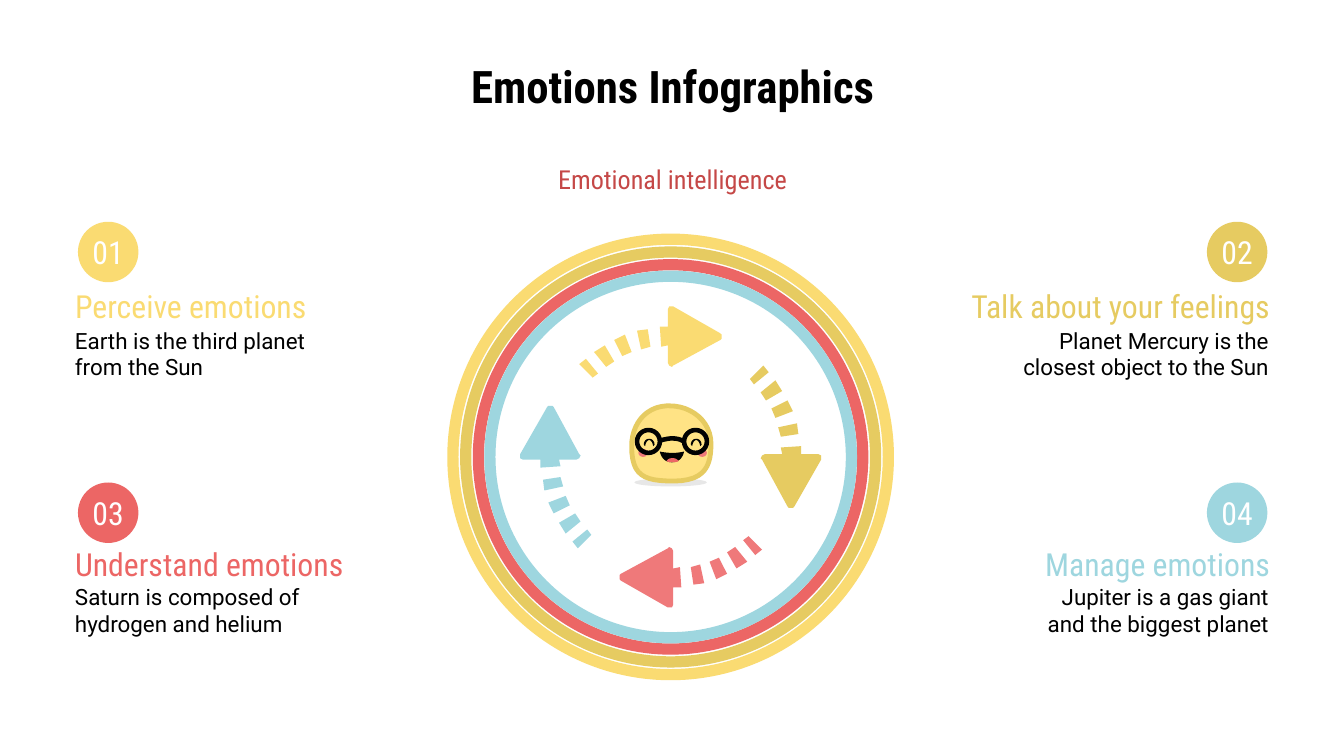
from pptx import Presentation
from pptx.dml.color import RGBColor
from pptx.enum.shapes import MSO_SHAPE
from pptx.enum.text import MSO_ANCHOR, MSO_AUTO_SIZE, PP_ALIGN
from pptx.util import Inches, Pt

OVAL = MSO_SHAPE.OVAL
TOP, MIDDLE = MSO_ANCHOR.TOP, MSO_ANCHOR.MIDDLE
LEFT, CENTER, RIGHT = PP_ALIGN.LEFT, PP_ALIGN.CENTER, PP_ALIGN.RIGHT
NO_AUTOFIT = MSO_AUTO_SIZE.NONE

YELLOW = RGBColor(0xFA, 0xDB, 0x72)
GOLD = RGBColor(0xE6, 0xCB, 0x61)
RED = RGBColor(0xEC, 0x66, 0x65)
PINK = RGBColor(0xEF, 0x79, 0x7A)
BLUE = RGBColor(0x9E, 0xD6, 0xDF)
DARK_RED = RGBColor(0xC5, 0x48, 0x47)
SKIN = RGBColor(0xFF, 0xE3, 0x85)
GREY = RGBColor(0xE7, 0xE7, 0xE7)
INK = RGBColor(0x01, 0x02, 0x02)
BLACK = RGBColor(0, 0, 0)
WHITE = RGBColor(0xFF, 0xFF, 0xFF)
CONDENSED, REGULAR = "Roboto Condensed", "Roboto"

CENTER_X, CENTER_Y = 4.99, 3.4
CURVE_STEPS = 12

# Widescreen page, 16:9
deck = Presentation()
deck.slide_width = Inches(10)
deck.slide_height = Inches(10) * 9 // 16
slide = deck.slides.add_slide(deck.slide_layouts[5])
shapes = slide.shapes


def write(text, box=None, shape=None, size=12, font=CONDENSED, color=BLACK,
          bold=False, align=LEFT, anchor=MIDDLE, side_inset=0.1):
    """Put formatted text in a given shape, or in a new text box."""
    if shape is None:
        shape = shapes.add_textbox(*map(Inches, box))
    frame = shape.text_frame
    frame.word_wrap, frame.auto_size = True, NO_AUTOFIT
    frame.vertical_anchor = anchor
    frame.margin_left = frame.margin_right = Inches(side_inset)
    frame.margin_top = frame.margin_bottom = Inches(0.1)
    para = frame.paragraphs[0]
    para.text, para.alignment = text, align
    for span in para.runs:
        span.font.name, span.font.size = font, Pt(size)
        span.font.bold, span.font.color.rgb = bold, color


def draw(oval=None, outline=None, fill=None, line=None, width=1, closed=True):
    """Draw an oval box, or an outline of points (2 numbers) and curves (6)."""
    if oval:
        shape = shapes.add_shape(OVAL, *map(Inches, oval))
    else:
        points = [outline[0]]
        for step in outline[1:]:
            if len(step) == 2:
                points.append(step)
                continue
            knots = [points[-1], step[:2], step[2:4], step[4:]]
            for index in range(1, CURVE_STEPS + 1):
                t = index / CURVE_STEPS
                weights = ((1 - t) ** 3, 3 * t * (1 - t) ** 2, 3 * t * t * (1 - t), t ** 3)
                points.append([sum(w * knot[axis] for w, knot in zip(weights, knots))
                               for axis in (0, 1)])
        points = [(Inches(x), Inches(y)) for x, y in points]
        builder = shapes.build_freeform(*points[0], scale=1.0)
        builder.add_line_segments(points[1:], close=closed)
        shape = builder.convert_to_shape()
    shape.shadow.inherit = False
    if fill is None:
        shape.fill.background()
    else:
        shape.fill.solid()
        shape.fill.fore_color.rgb = fill
    if line is None:
        shape.line.fill.background()
    else:
        shape.line.color.rgb, shape.line.width = line, Pt(width)
    return shape


# Title and subtitle
title = shapes.title
title.left, title.top, title.width, title.height = map(Inches, (0.2, 0.34, 9.61, 0.63))
write("Emotions Infographics", shape=title, size=24, bold=True, align=CENTER, anchor=TOP)

# Concentric rings
for diameter, color in ((3.24, YELLOW), (3.05, GOLD), (2.86, RED), (2.69, BLUE)):
    draw(oval=(CENTER_X - diameter / 2, CENTER_Y - diameter / 2, diameter, diameter),
         line=color, width=6)

write("Emotional intelligence", (2.4, 1.1, 5.21, 0.47), size=14, color=DARK_RED, align=CENTER)

# Dashed arrow, turned by quarters around the centre
arrow_parts = [
    [(4.5, 2.57), (4.57, 2.69), (4.51, 2.73), (4.42, 2.62)],
    [(4.36, 2.67), (4.45, 2.78), (4.41, 2.81), (4.31, 2.71)],
    [(4.65, 2.49), (4.7, 2.62), (4.63, 2.65), (4.57, 2.53)],
    [(4.82, 2.45), (4.84, 2.58), (4.77, 2.6), (4.74, 2.46)],
    [(5, 2.28), (5.01, 2.28), (5.36, 2.48), (5.37, 2.49), (5.37, 2.52), (5.36, 2.53),
     (5.01, 2.72), (5, 2.73), (4.98, 2.72), (4.97, 2.7), (4.97, 2.57), (4.92, 2.58),
     (4.91, 2.43), (4.97, 2.43), (4.97, 2.3), (4.98, 2.28)],
]
for quarter_turns, color in ((0, YELLOW), (3, BLUE), (1, GOLD), (2, PINK)):
    for part in arrow_parts:
        offsets = [(x - CENTER_X, y - CENTER_Y) for x, y in part]
        for _ in range(quarter_turns):
            offsets = [(-dy, dx) for dx, dy in offsets]
        draw(outline=[(CENTER_X + dx, CENTER_Y + dy) for dx, dy in offsets], fill=color)

# Smiling face: shadow, head, mouth, tongue
draw(oval=(4.72, 3.56, 0.54, 0.06), fill=GREY)
draw(outline=[(4.98, 3.02), (4.97, 3.02, 4.97, 3.02, 4.96, 3.02),
              (4.79, 3.03, 4.7, 3.17, 4.7, 3.32), (4.7, 3.54, 4.79, 3.58, 5.01, 3.58),
              (5.26, 3.58, 5.29, 3.45, 5.29, 3.3), (5.29, 3.14, 5.15, 3.02, 4.98, 3.02)],
     fill=SKIN, line=GOLD, width=2.57)
draw(outline=[(5.09, 3.36), (5.05, 3.37, 5.02, 3.37, 5, 3.37),
              (4.95, 3.37, 4.91, 3.36, 4.91, 3.36), (4.91, 3.36, 4.92, 3.44, 5, 3.44),
              (5.08, 3.44, 5.09, 3.36, 5.09, 3.36)], fill=INK)
draw(outline=[(5, 3.41), (4.97, 3.41, 4.96, 3.43, 4.96, 3.43),
              (4.97, 3.44, 4.98, 3.44, 5, 3.44), (5.02, 3.44, 5.04, 3.44, 5.05, 3.43),
              (5.03, 3.41, 5.02, 3.41, 5, 3.41)], fill=RED)

# Cheeks, eyes and glasses
for cheek_x in (4.75, 5.19):
    draw(oval=(cheek_x, 3.34, 0.07, 0.06), fill=PINK)
for eye_x in (4.79, 5.14):
    draw(outline=[(eye_x, 3.31), (eye_x, 3.25, eye_x + 0.08, 3.25, eye_x + 0.08, 3.31),
                  (eye_x + 0.07, 3.32),
                  (eye_x + 0.06, 3.26, eye_x + 0.02, 3.26, eye_x + 0.01, 3.32)], fill=INK)
for lens_x in (4.74, 5.09):
    draw(oval=(lens_x, 3.2, 0.17, 0.17), line=INK, width=2.44)
draw(outline=[(4.91, 3.28), (4.91, 3.28, 5.01, 3.24, 5.08, 3.28)],
     line=INK, width=2.44, closed=False)

# Four numbered topics: badge, heading, description
columns = {LEFT: (0.58, 0.46, 0.46, 2.52), RIGHT: (8.98, 6.93, 7.31, 2.62)}
rows = {"upper": (1.65, 2.04, 2.34), "lower": (3.59, 3.96, 4.25)}
topics = [
    ("01", "Perceive emotions", "Earth is the third planet from the Sun", YELLOW, LEFT, "upper"),
    ("02", "Talk about your feelings", "Planet Mercury is the closest object to the Sun",
     GOLD, RIGHT, "upper"),
    ("03", "Understand emotions", "Saturn is composed of hydrogen and helium",
     RED, LEFT, "lower"),
    ("04", "Manage emotions", "Jupiter is a gas giant\nand the biggest planet",
     BLUE, RIGHT, "lower"),
]
for number, heading, description, color, side, row in topics:
    badge_x, heading_x, description_x, heading_width = columns[side]
    badge_y, heading_y, description_y = rows[row]
    badge = draw(oval=(badge_x, badge_y, 0.45, 0.45), fill=color)
    write(number, shape=badge, size=17, color=WHITE, align=CENTER, side_inset=0)
    write(heading, (heading_x, heading_y, heading_width, 0.47), size=17, color=color, align=side)
    write(description, (description_x, description_y, 2.23, 0.58), font=REGULAR, align=side)

deck.save("out.pptx")
